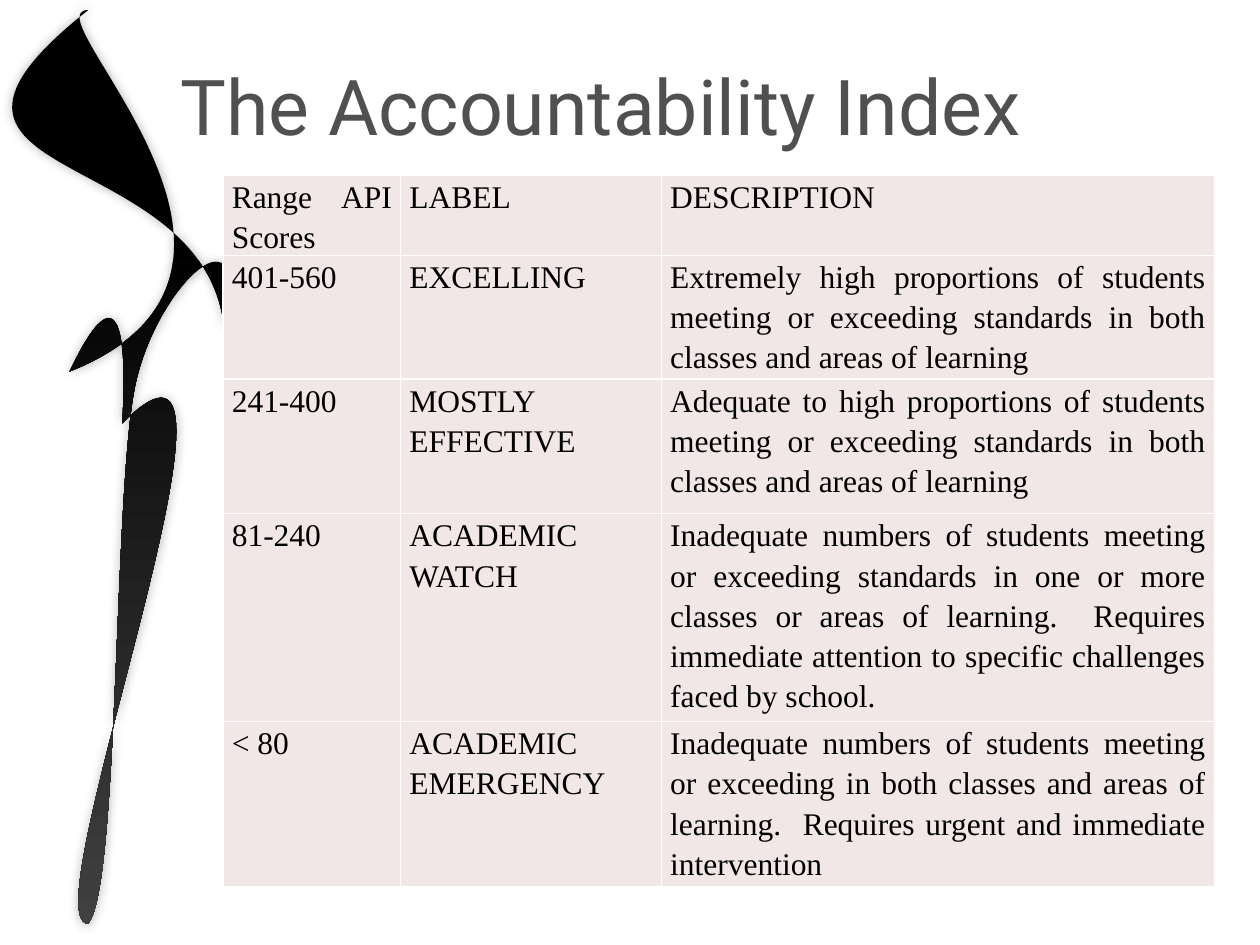
from dataclasses import dataclass

from lxml.etree import SubElement
from pptx import Presentation
from pptx.dml.color import RGBColor
from pptx.enum.text import MSO_ANCHOR, MSO_AUTO_SIZE, PP_ALIGN
from pptx.oxml.ns import qn
from pptx.util import Inches, Pt

WIDTH, HEIGHT = Inches(10), Inches(7.5)
RIBBON_GRID = WIDTH // 1000


@dataclass(frozen=True)
class Theme:
    title_font: str = "Roboto"
    title_size: int = 44
    title_color: str = "505050"
    body_font: str = "Times New Roman"
    body_size: int = 18
    body_color: str = "000000"
    line_spacing: float = 1.15
    cell_fill: str = "F2E7E7"
    border: str = "FFFFFF"
    ribbon_dark: str = "000000"
    ribbon_light: str = "404040"


THEME = Theme()

# Column and row sizes are percentages of the slide's width and height.
COLUMNS = (14.1, 20.7, 43.9)
ROWS = (5.73, 13.07, 14.27, 22, 17.47)
INDEX_ROWS = (
    ("Range API Scores", "LABEL", "DESCRIPTION"),
    ("401-560", "EXCELLING",
     "Extremely high proportions of students meeting or exceeding standards "
     "in both classes and areas of learning"),
    ("241-400", "MOSTLY EFFECTIVE",
     "Adequate to high proportions of students meeting or exceeding standards "
     "in both classes and areas of learning"),
    ("81-240", "ACADEMIC WATCH",
     "Inadequate numbers of students meeting or exceeding standards in one or "
     "more classes or areas of learning.  Requires immediate attention to "
     "specific challenges faced by school."),
    ("< 80", "ACADEMIC EMERGENCY",
     "Inadequate numbers of students meeting or exceeding in both classes and "
     "areas of learning.  Requires urgent and immediate intervention"),
)

# Each curve is two control points and an end point, in ribbon grid units.
RIBBON_START = (97, 336)
RIBBON_CURVES = (
    ((106, 176), (56, 295), (55, 295)),
    ((257, 215), (21, 8), (70, 8)),
    ((-108, 149), (163, 111), (178, 261)),
    ((201, 157), (126, 224), (108, 303)),
    ((90, 381), (95, 704), (70, 733)),
    ((21, 733), (225, 207), (97, 336)),
)


def across(percent):
    return round(WIDTH * percent / 100)


def down(percent):
    return round(HEIGHT * percent / 100)


def color(value):
    return RGBColor.from_string(value)


def bend_segments(shape):
    """Turn every three straight segments into one cubic curve."""
    lines = list(shape._element.iter(qn("a:lnTo")))
    for first, second, end in zip(lines[::3], lines[1::3], lines[2::3]):
        first.tag = qn("a:cubicBezTo")
        for line in (second, end):
            first.append(line[0])
            line.getparent().remove(line)


def add_glow_shadow(shape):
    shape.shadow.inherit = False
    effects = shape._element.spPr.find(qn("a:effectLst"))
    shadow = SubElement(effects, qn("a:outerShdw"), blurRad=str(Pt(6)), dist="0",
                        dir="0", algn="ctr", rotWithShape="0")
    tint = SubElement(shadow, qn("a:srgbClr"), val=THEME.ribbon_light)
    SubElement(tint, qn("a:alpha"), val="40000")


def add_ribbon(slide):
    builder = slide.shapes.build_freeform(*RIBBON_START, scale=RIBBON_GRID)
    builder.add_line_segments([point for curve in RIBBON_CURVES for point in curve],
                              close=True)
    shape = builder.convert_to_shape()
    bend_segments(shape)
    shape.fill.gradient()
    shape.fill.gradient_angle = 270
    stops = ((0.25, THEME.ribbon_dark), (1, THEME.ribbon_light))
    for stop, (position, value) in zip(shape.fill.gradient_stops, stops):
        stop.position = position
        stop.color.rgb = color(value)
    shape.line.fill.background()
    add_glow_shadow(shape)
    slide.shapes._spTree.insert(2, shape._element)  # behind the title


def set_title(slide, text):
    title = slide.shapes.title
    title.left, title.top = across(13.3), down(1.07)
    title.width, title.height = across(74.4), down(20)
    frame = title.text_frame
    frame.text = text
    frame.auto_size = MSO_AUTO_SIZE.NONE
    frame.vertical_anchor = MSO_ANCHOR.MIDDLE
    paragraph = frame.paragraphs[0]
    paragraph.alignment = PP_ALIGN.LEFT
    paragraph.font.name = THEME.title_font
    paragraph.font.size = Pt(THEME.title_size)
    paragraph.font.color.rgb = color(THEME.title_color)


def add_borders(cell):
    properties = cell._tc.get_or_add_tcPr()
    for side in ("lnL", "lnR", "lnT", "lnB"):
        line = SubElement(properties, qn(f"a:{side}"), w=str(Pt(1)))
        fill = SubElement(line, qn("a:solidFill"))
        SubElement(fill, qn("a:srgbClr"), val=THEME.border)


def fill_cell(cell, text):
    cell.text = text
    cell.margin_left = cell.margin_right = Inches(0.07)
    cell.margin_top = cell.margin_bottom = 0
    add_borders(cell)
    cell.fill.solid()
    cell.fill.fore_color.rgb = color(THEME.cell_fill)
    paragraph = cell.text_frame.paragraphs[0]
    paragraph.alignment = PP_ALIGN.JUSTIFY
    paragraph.line_spacing = THEME.line_spacing
    paragraph.font.name = THEME.body_font
    paragraph.font.size = Pt(THEME.body_size)
    paragraph.font.bold = False
    paragraph.font.color.rgb = color(THEME.body_color)


def add_index_table(slide):
    table = slide.shapes.add_table(
        len(ROWS), len(COLUMNS), across(17.7), down(18.53),
        across(sum(COLUMNS)), down(sum(ROWS))).table
    for column, share in zip(table.columns, COLUMNS):
        column.width = across(share)
    for row, share, texts in zip(table.rows, ROWS, INDEX_ROWS):
        row.height = down(share)
        for cell, text in zip(row.cells, texts):
            fill_cell(cell, text)


def main():
    presentation = Presentation()
    presentation.slide_width, presentation.slide_height = WIDTH, HEIGHT
    slide = presentation.slides.add_slide(presentation.slide_layouts[5])
    add_ribbon(slide)
    set_title(slide, "The Accountability Index")
    add_index_table(slide)
    presentation.save("out.pptx")


if __name__ == "__main__":
    main()
